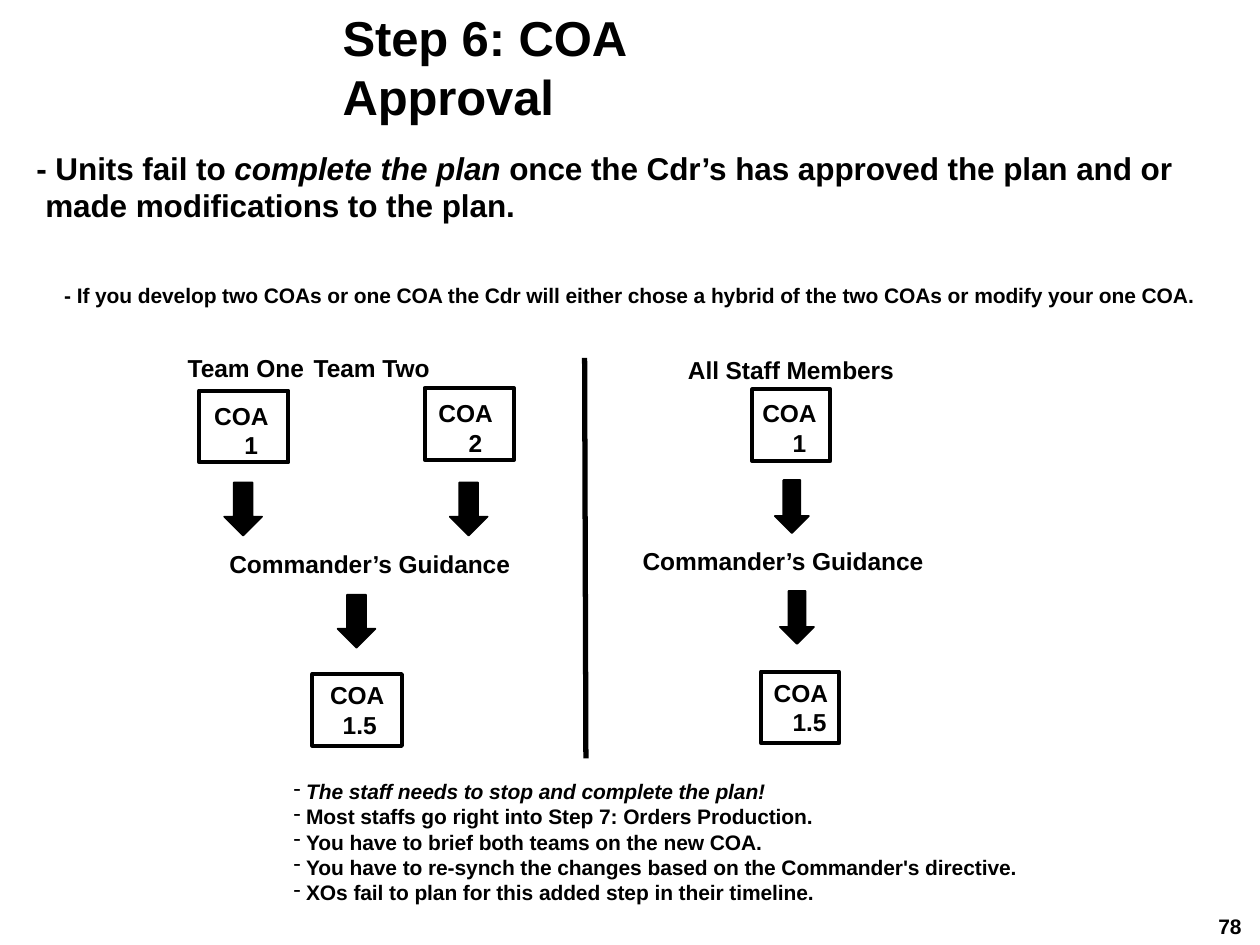
from dataclasses import dataclass

from pptx import Presentation, util as u
from pptx.dml.color import RGBColor
from pptx.enum import shapes as sh, text as tx
from pptx.oxml import parse_xml
from pptx.oxml.ns import nsdecls, qn

# The slide is a grid of 100 columns by 75 rows
COLS, ROWS = 100, 75
CELL = u.Inches(0.1)
INK = "000000"


@dataclass
class Spot:
    col: float
    row: float
    wide: float
    high: float


@dataclass
class Run:
    text: str
    slant: bool = False


@dataclass
class Label:
    spot: Spot
    size: int
    paras: list[list[Run]]
    left: float = 0.1
    hang: float = 0
    right: float = 0
    tab: float = 0
    dash: bool = False
    top: float = 0.1


@dataclass
class Card:
    spot: Spot
    num: str
    first: float   # offset of "COA"
    second: float  # offset of the number
    top: float


def cell(n: float) -> int:
    return u.Emu(round(n * CELL))


def place(spot: Spot) -> list[int]:
    return [cell(n) for n in (spot.col, spot.row, spot.wide, spot.high)]


def paint(fmt, hue: str) -> None:
    fmt.solid()
    fmt.fore_color.rgb = RGBColor.from_string(hue)


def frame(shape, top: float):
    tf = shape.text_frame
    tf.word_wrap = True
    tf.vertical_anchor = tx.MSO_ANCHOR.TOP
    tf.margin_left = tf.margin_right = tf.margin_bottom = 0
    tf.margin_top = cell(top)
    return tf


def indent(para, left: float, hang: float, right: float = 0) -> None:
    para.alignment = tx.PP_ALIGN.LEFT
    ppr = para._p.get_or_add_pPr()
    ppr.set("marL", str(cell(left)))
    ppr.set("indent", str(cell(hang)))
    ppr.set("marR", str(cell(right)))


def write(para, run: Run, size: int) -> None:
    r = para.add_run()
    r.text = run.text
    font = r.font
    font.name, font.size, font.bold, font.italic = "Arial", u.Pt(size), True, run.slant
    paint(font.fill, INK)
    r._r.get_or_add_rPr().set("spc", "-5")


def draw_label(slide, item: Label) -> None:
    tf = frame(slide.shapes.add_textbox(*place(item.spot)), item.top)
    for i, runs in enumerate(item.paras):
        para = tf.paragraphs[0] if i == 0 else tf.add_paragraph()
        indent(para, item.left, item.hang, item.right)
        ppr = para._p.get_or_add_pPr()
        if item.dash:
            ppr.append(parse_xml(f'<a:buChar {nsdecls("a")} char="-"/>'))
        if item.tab:
            ppr.append(parse_xml(f'<a:tabLst {nsdecls("a")}>'
                                 f'<a:tab pos="{cell(item.tab)}" algn="l"/></a:tabLst>'))
        for run in runs:
            write(para, run, item.size)


def draw_card(slide, card: Card) -> None:
    box = slide.shapes.add_shape(sh.MSO_SHAPE.RECTANGLE, *place(card.spot))
    box.shadow.inherit = False
    box.fill.background()
    paint(box.line.fill, INK)
    box.line.width = u.Pt(2.28)
    para = frame(box, card.top).paragraphs[0]
    indent(para, card.second, card.first - card.second)
    write(para, Run("COA"), 14)
    para.add_line_break()
    write(para, Run(card.num), 14)


def draw_arrow(slide, spot: Spot) -> None:
    arrow = slide.shapes.add_shape(sh.MSO_SHAPE.DOWN_ARROW, *place(spot))
    arrow.shadow.inherit = False
    paint(arrow.fill, INK)
    paint(arrow.line.fill, INK)
    arrow.line.width = u.Pt(0.96)


def draw_rule(slide, x1: float, y1: float, x2: float, y2: float) -> None:
    rule = slide.shapes.add_connector(sh.MSO_CONNECTOR.STRAIGHT,
                                      *[cell(n) for n in (x1, y1, x2, y2)])
    paint(rule.line.fill, INK)
    rule.line.width = u.Pt(3)
    rule._element.find(qn("p:spPr")).append(parse_xml(f'<a:effectLst {nsdecls("a")}/>'))


LABELS = [
    # Title and lead statements
    Label(Spot(27.1, 0.5, 40.6, 4.9), 28, [[Run("Step 6: COA Approval")]], right=2),
    Label(Spot(2.8, 11.7, 91, 6.3), 18, [[
        Run("- Units fail to "), Run("complete the plan ", True),
        Run("once the Cdr’s has approved the plan and or "
            "made modifications to the plan.")]], left=0.8, hang=-0.7),
    Label(Spot(5, 22.3, 92, 2.3), 12, [[
        Run("- If you develop two COAs or one COA the Cdr will either chose "
            "a hybrid of the two COAs or modify your one COA.")]]),
    # Flow headings
    Label(Spot(14.8, 27.9, 27.5, 2.6), 14, [[Run("Team One\tTeam Two")]], tab=18.1),
    Label(Spot(54.5, 28.1, 17.5, 2.6), 14, [[Run("All Staff Members")]]),
    Label(Spot(18.1, 43.5, 23.5, 2.6), 14, [[Run("Commander’s Guidance")]]),
    Label(Spot(50.9, 43.2, 23.5, 2.6), 14, [[Run("Commander’s Guidance")]]),
    # Closing points
    Label(Spot(23.1, 61.7, 59, 10.3), 12, [
        [Run("The staff needs to stop and complete the plan!", True)],
        [Run("Most staffs go right into Step 7: Orders Production.")],
        [Run("You have to brief both teams on the new COA.")],
        [Run("You have to re-synch the changes based on the Commander's directive.")],
        [Run("XOs fail to plan for this added step in their timeline.")],
    ], left=1.2, hang=-1, dash=True),
    # Page number
    Label(Spot(96.3, 72.5, 2.8, 2.1), 12, [[Run("78")]], left=0.4, top=0),
]

WIDE, SLIM, TALL = 7.1, 6.2, 5.7
CARDS = [
    Card(Spot(15.8, 31, WIDE, TALL), "1", 1.2, 3.6, 0.8),
    Card(Spot(33.7, 30.8, WIDE, TALL), "2", 1.1, 3.5, 0.8),
    Card(Spot(24.8, 53.5, WIDE, TALL), "1.5", 1.4, 2.4, 0.5),
    Card(Spot(59.7, 30.9, SLIM, TALL), "1", 0.8, 3.2, 0.7),
    Card(Spot(60.4, 53.3, SLIM, TALL), "1.5", 1, 2.5, 0.5),
]

ARROWS = [Spot(col, row, wide, 4.2) for col, row, wide in (
    (17.8, 38.3, 3), (35.7, 38.3, 3), (26.8, 47.2, 3),
    (61.5, 38.1, 2.7), (61.9, 46.9, 2.7))]


def main() -> None:
    prs = Presentation()
    prs.slide_width, prs.slide_height = cell(COLS), cell(ROWS)
    slide = prs.slides.add_slide(prs.slide_layouts[6])
    for item in LABELS:
        draw_label(slide, item)
    for card in CARDS:
        draw_card(slide, card)
    for spot in ARROWS:
        draw_arrow(slide, spot)
    draw_rule(slide, 46.4, 28.4, 46.5, 60.2)  # divider between the two flows
    prs.save("out.pptx")


if __name__ == "__main__":
    main()
